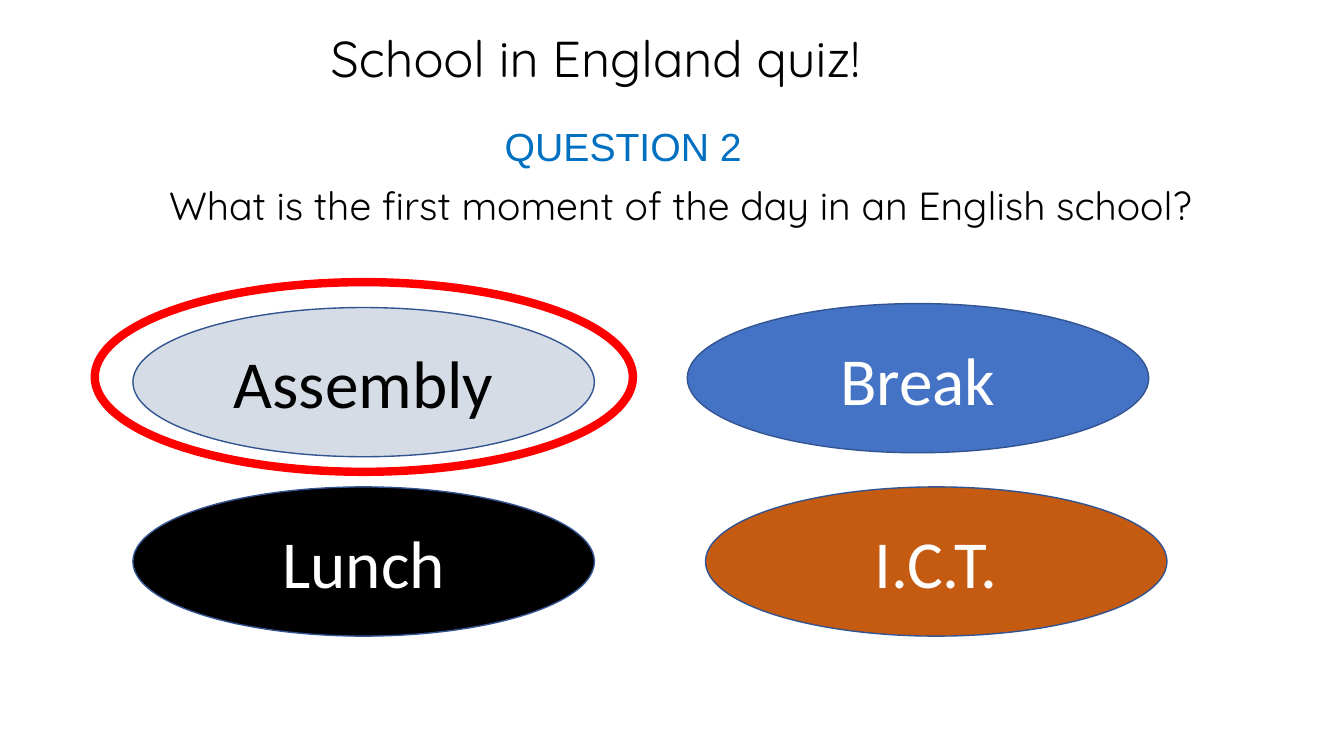
from pptx import Presentation
from pptx.dml.color import RGBColor
from pptx.enum.shapes import MSO_SHAPE
from pptx.enum.text import MSO_ANCHOR, MSO_AUTO_SIZE, PP_ALIGN
from pptx.util import Cm, Pt

BLACK = RGBColor(0x00, 0x00, 0x00)
WHITE = RGBColor(0xFF, 0xFF, 0xFF)
PALE = RGBColor(0xD6, 0xDC, 0xE5)
BLUE = RGBColor(0x44, 0x72, 0xC4)
ORANGE = RGBColor(0xC5, 0x5A, 0x11)
OUTLINE = RGBColor(0x32, 0x54, 0x91)
RED = RGBColor(0xFF, 0x00, 0x00)
HEADING = RGBColor(0x00, 0x70, 0xC0)

# Boxes are left, top, width, height in centimetres.
TITLE = ("School in England quiz!", (8.08, 0.56, 21.89, 1.8))
TEXTS = [
    ("What is the first moment of the day in an English school?",
     (4.01, 4.45, 27.53, 1.45), "Quicksand", BLACK),
    ("QUESTION 2", (12.47, 2.95, 8.56, 1.45), "Arial", HEADING),
]
ANSWER_SIZE = (11.63, 3.76)
ANSWERS = [
    ("Assembly", (3.35, 7.75), PALE, BLACK),
    ("Break", (17.32, 7.65), BLUE, WHITE),
    ("Lunch", (3.35, 12.27), BLACK, WHITE),
    ("I.C.T.", (17.78, 12.27), ORANGE, WHITE),
]
RING = (2.39, 7.11, 13.56, 4.78)


def write(shape, text, font="Calibri", size=28, color=BLACK,
          align=PP_ALIGN.LEFT, anchor=MSO_ANCHOR.TOP):
    frame = shape.text_frame
    frame.word_wrap = True
    frame.auto_size = MSO_AUTO_SIZE.NONE
    frame.vertical_anchor = anchor
    para = frame.paragraphs[0]
    para.alignment = align
    span = para.add_run()
    span.text = text
    span.font.name = font
    span.font.size = Pt(size)
    span.font.color.rgb = color


def add_ellipse(page, box, line_color, line_width, fill=None):
    ellipse = page.shapes.add_shape(MSO_SHAPE.OVAL, *map(Cm, box))
    ellipse.shadow.inherit = False
    if fill is None:
        ellipse.fill.background()
    else:
        ellipse.fill.solid()
        ellipse.fill.fore_color.rgb = fill
    ellipse.line.color.rgb = line_color
    ellipse.line.width = Pt(line_width)
    return ellipse


def main():
    deck = Presentation()
    deck.slide_width, deck.slide_height = Cm(33.87), Cm(19.05)
    page = deck.slides.add_slide(deck.slide_layouts[5])

    title = page.shapes.title
    text, box = TITLE
    title.left, title.top, title.width, title.height = map(Cm, box)
    write(title, text, font="Quicksand", size=36)

    for text, box, font, color in TEXTS:
        write(page.shapes.add_textbox(*map(Cm, box)), text, font=font, color=color)

    for text, corner, fill, color in ANSWERS:
        answer = add_ellipse(page, corner + ANSWER_SIZE, OUTLINE, 1, fill)
        write(answer, text, size=48, color=color,
              align=PP_ALIGN.CENTER, anchor=MSO_ANCHOR.MIDDLE)

    add_ellipse(page, RING, RED, 6)
    deck.save("out.pptx")


if __name__ == "__main__":
    main()
